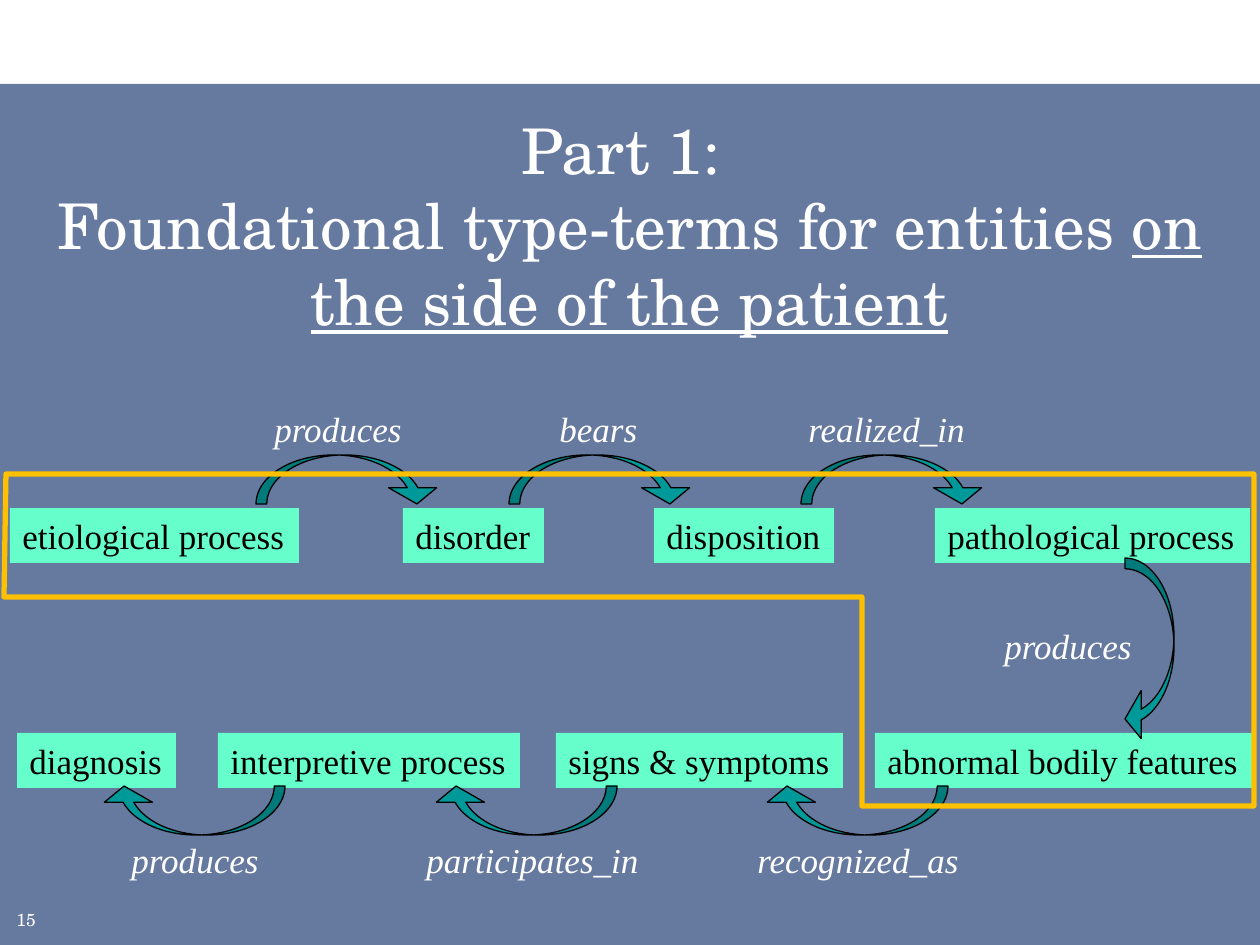
from typing import NamedTuple, Optional

from lxml.etree import SubElement
from pptx import Presentation
from pptx.dml.color import RGBColor
from pptx.enum.shapes import MSO_SHAPE
from pptx.enum.text import MSO_ANCHOR, MSO_AUTO_SIZE, PP_ALIGN
from pptx.oxml.ns import qn
from pptx.util import Emu, Pt

PX = 914400 / 126
SERIF, DISPLAY = "Times New Roman", "TeX Gyre Schola"
WHITE, BLACK, NAVY = "FFFFFF", "000000", "002060"
MINT, TEAL, AMBER = "66FFCC", "009999", "FFC000"


class Term(NamedTuple):
    text: str
    left: int
    top: int
    width: int


class Arrow(NamedTuple):
    left: int
    top: int
    rotation: int


TOP_ROW, BOTTOM_ROW = 508, 733
ENTITIES = [
    Term("etiological process", 10, TOP_ROW, 289),
    Term("disorder", 403, TOP_ROW, 141),
    Term("disposition", 654, TOP_ROW, 180),
    Term("pathological process", 935, TOP_ROW, 315),
    Term("abnormal bodily features", 875, BOTTOM_ROW, 378),
    Term("signs & symptoms", 556, BOTTOM_ROW, 287),
    Term("interpretive process", 218, BOTTOM_ROW, 302),
    Term("diagnosis", 17, BOTTOM_ROW, 159),
]

UPPER_LABELS, LOWER_LABELS = 401, 832
RELATIONS = [
    Term("produces", 262, UPPER_LABELS, 154),
    Term("bears", 547, UPPER_LABELS, 103),
    Term("realized_in", 796, UPPER_LABELS, 183),
    Term("produces", 992, 618, 154),
    Term("recognized_as", 745, LOWER_LABELS, 228),
    Term("participates_in", 414, LOWER_LABELS, 239),
    Term("produces", 119, LOWER_LABELS, 154),
]

ARROWS = [Arrow(left, 455, 0) for left in (256, 509, 801)]
ARROWS += [Arrow(left, 786, 180) for left in (100, 432, 763)]
ARROWS.append(Arrow(1057, 626, 90))

PATIENT_SIDE = [(6, 474), (1254, 474), (1254, 806), (862, 806), (862, 597), (4, 597)]


def px(length: int) -> Emu:
    return Emu(round(length * PX))


def colour(code: str) -> RGBColor:
    return RGBColor.from_string(code)


def paint(shape, fill: str) -> None:
    shape.fill.solid()
    shape.fill.fore_color.rgb = colour(fill)


def style(font, name: str, size: int, code: str, italic: bool = False) -> None:
    font.name = name
    font.size = Pt(size)
    font.color.rgb = colour(code)
    font.italic = italic


def draw_panel(page, title) -> None:
    panel = page.shapes.add_shape(MSO_SHAPE.RECTANGLE, 0, px(84), px(1260), px(861))
    panel.shadow.inherit = False
    panel.line.fill.background()
    paint(panel, NAVY)
    # 60 % opacity, placed behind the title
    solid = panel.element.spPr.find(qn("a:solidFill"))
    SubElement(solid[0], qn("a:alpha"), val="60000")
    title.element.addprevious(panel.element)


def draw_title(title) -> None:
    title.left, title.top, title.width, title.height = px(31), px(105), px(1197), px(105)
    frame = title.text_frame
    frame.word_wrap = True
    frame.auto_size = MSO_AUTO_SIZE.NONE
    frame.vertical_anchor = MSO_ANCHOR.TOP
    para = frame.paragraphs[0]
    para.alignment = PP_ALIGN.CENTER
    para.add_run().text = "Part 1: "
    para.add_line_break()
    para.add_run().text = "Foundational type-terms for entities "
    span = para.add_run()
    span.text = "on the side of the patient"
    span.font.underline = True
    style(para.font, DISPLAY, 36, WHITE)


def draw_term(page, term: Term, code: str, fill: Optional[str] = None,
              italic: bool = False) -> None:
    box = page.shapes.add_textbox(px(term.left), px(term.top), px(term.width), px(55))
    if fill:
        paint(box, fill)
    frame = box.text_frame
    frame.word_wrap = False
    frame.auto_size = MSO_AUTO_SIZE.SHAPE_TO_FIT_TEXT
    para = frame.paragraphs[0]
    para.text = term.text
    style(para.font, SERIF, 20, code, italic)


def draw_arrow(page, arrow: Arrow) -> None:
    shape = page.shapes.add_shape(
        MSO_SHAPE.CURVED_DOWN_ARROW, px(arrow.left), px(arrow.top), px(185), px(49))
    for index, value in enumerate((0.22, 0.98, 0.33)):
        shape.adjustments[index] = value
    shape.rotation = arrow.rotation
    shape.shadow.inherit = False
    paint(shape, TEAL)
    shape.line.color.rgb = colour(BLACK)
    shape.line.width = Pt(0.75)


def draw_outline(page) -> None:
    start, *corners = PATIENT_SIDE
    builder = page.shapes.build_freeform(*start, scale=PX)
    builder.add_line_segments(corners, close=True)
    outline = builder.convert_to_shape()
    outline.shadow.inherit = False
    outline.fill.background()
    outline.line.color.rgb = colour(AMBER)
    outline.line.width = Pt(3)


def draw_page_number(page) -> None:
    box = page.shapes.add_textbox(px(4), px(903), px(49), px(32))
    para = box.text_frame.paragraphs[0]
    para.text = "15"
    style(para.font, DISPLAY, 10, WHITE)


def main() -> None:
    deck = Presentation()
    deck.slide_width, deck.slide_height = px(1260), px(945)
    page = deck.slides.add_slide(deck.slide_layouts[5])

    # Background, title and page number
    title = page.shapes.title
    draw_panel(page, title)
    draw_title(title)
    draw_page_number(page)

    # Chain of entities and the relations between them
    for entity in ENTITIES:
        draw_term(page, entity, BLACK, fill=MINT)
    for relation in RELATIONS:
        draw_term(page, relation, WHITE, italic=True)
    for arrow in ARROWS:
        draw_arrow(page, arrow)

    # Frame around the patient side
    draw_outline(page)
    deck.save("out.pptx")


if __name__ == "__main__":
    main()
